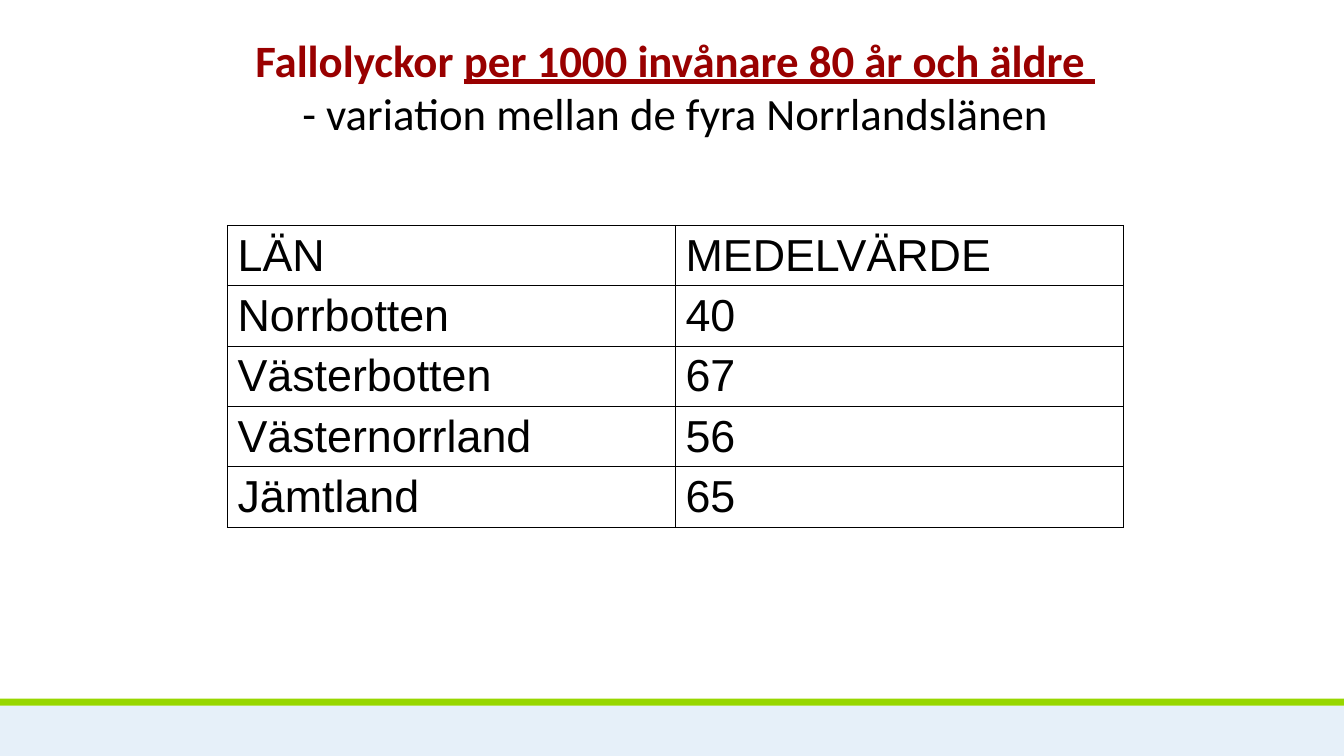
from lxml import etree
from pptx import Presentation
from pptx.dml.color import RGBColor
from pptx.enum.shapes import MSO_SHAPE
from pptx.enum.text import MSO_ANCHOR, MSO_AUTO_SIZE, PP_ALIGN
from pptx.oxml.ns import qn
from pptx.util import Pt

RECTANGLE = MSO_SHAPE.RECTANGLE
MIDDLE, TOP = MSO_ANCHOR.MIDDLE, MSO_ANCHOR.TOP
NO_AUTOFIT = MSO_AUTO_SIZE.NONE
CENTER, LEFT = PP_ALIGN.CENTER, PP_ALIGN.LEFT

BLACK = RGBColor(0x00, 0x00, 0x00)
WHITE = RGBColor(0xFF, 0xFF, 0xFF)
DARK_RED = RGBColor(0x99, 0x00, 0x00)
GREEN = RGBColor(0x97, 0xD7, 0x00)
PALE_BLUE = RGBColor(0xE6, 0xF0, 0xF9)

SLIDE_WIDTH, SLIDE_HEIGHT = 960, 540
FOOTER_HEIGHT, STRIPE_HEIGHT = 36, 5

HEADING = [
    [("Fallolyckor ", DARK_RED, True, False),
     ("per 1000 invånare 80 år och äldre ", DARK_RED, True, True)],
    [("- variation mellan de fyra Norrlandslänen", BLACK, False, False)],
]
COUNTY_MEANS = [
    ("LÄN", "MEDELVÄRDE"),
    ("Norrbotten", "40"),
    ("Västerbotten", "67"),
    ("Västernorrland", "56"),
    ("Jämtland", "65"),
]


class SlideBuilder:
    """Draws on one slide in a shared style; all lengths are in points."""

    title_font, table_font, size = "Calibri", "Arial", 32

    def __init__(self, slide):
        self.slide = slide

    def band(self, top, height, color):
        band = self.slide.shapes.add_shape(
            RECTANGLE, 0, Pt(top), Pt(SLIDE_WIDTH), Pt(height))
        band.shadow.inherit = False
        band.fill.solid()
        band.fill.fore_color.rgb = color
        band.line.fill.background()

    def style(self, font, name, color):
        font.name, font.size = name, Pt(self.size)
        font.color.rgb = color

    def title(self, lines, left, top, width, height):
        title = self.slide.shapes.title
        title.left, title.top = Pt(left), Pt(top)
        title.width, title.height = Pt(width), Pt(height)
        frame = title.text_frame
        frame.word_wrap = True
        frame.auto_size = NO_AUTOFIT
        frame.vertical_anchor = MIDDLE
        for index, line in enumerate(lines):
            paragraph = frame.add_paragraph() if index else frame.paragraphs[0]
            paragraph.alignment = CENTER
            for text, color, bold, underline in line:
                run = paragraph.add_run()
                run.text = text
                self.style(run.font, self.title_font, color)
                run.font.bold, run.font.underline = bold, underline

    def table(self, rows, left, top, column_width, row_height):
        columns = len(rows[0])
        table = self.slide.shapes.add_table(
            len(rows), columns, Pt(left), Pt(top),
            Pt(column_width * columns), Pt(row_height * len(rows))).table
        table.first_row = table.horz_banding = False
        for column in table.columns:
            column.width = Pt(column_width)
        for row, values in zip(table.rows, rows):
            row.height = Pt(row_height)
            for cell, value in zip(row.cells, values):
                self.cell(cell, value)

    def cell(self, cell, value):
        cell.text_frame.text = value
        cell.vertical_anchor = TOP
        paragraph = cell.text_frame.paragraphs[0]
        paragraph.alignment = LEFT
        font = paragraph.runs[0].font
        self.style(font, self.table_font, BLACK)
        font.bold = False
        self.borders(cell)
        cell.fill.solid()
        cell.fill.fore_color.rgb = WHITE

    def borders(self, cell):
        properties = cell._tc.get_or_add_tcPr()
        for side in ("a:lnL", "a:lnR", "a:lnT", "a:lnB"):
            line = etree.SubElement(properties, qn(side), w=str(Pt(1)))
            fill = etree.SubElement(line, qn("a:solidFill"))
            etree.SubElement(fill, qn("a:srgbClr"), val=str(BLACK))


def main():
    presentation = Presentation()
    presentation.slide_width = Pt(SLIDE_WIDTH)
    presentation.slide_height = Pt(SLIDE_HEIGHT)
    title_only = presentation.slide_layouts[5]
    builder = SlideBuilder(presentation.slides.add_slide(title_only))

    footer_top = SLIDE_HEIGHT - FOOTER_HEIGHT
    builder.band(footer_top, FOOTER_HEIGHT, PALE_BLUE)
    builder.band(footer_top - STRIPE_HEIGHT, STRIPE_HEIGHT, GREEN)
    builder.title(HEADING, left=135.5, top=19, width=694, height=85)
    builder.table(COUNTY_MEANS, left=162.5, top=161, column_width=320,
                  row_height=43)
    presentation.save("out.pptx")


if __name__ == "__main__":
    main()
